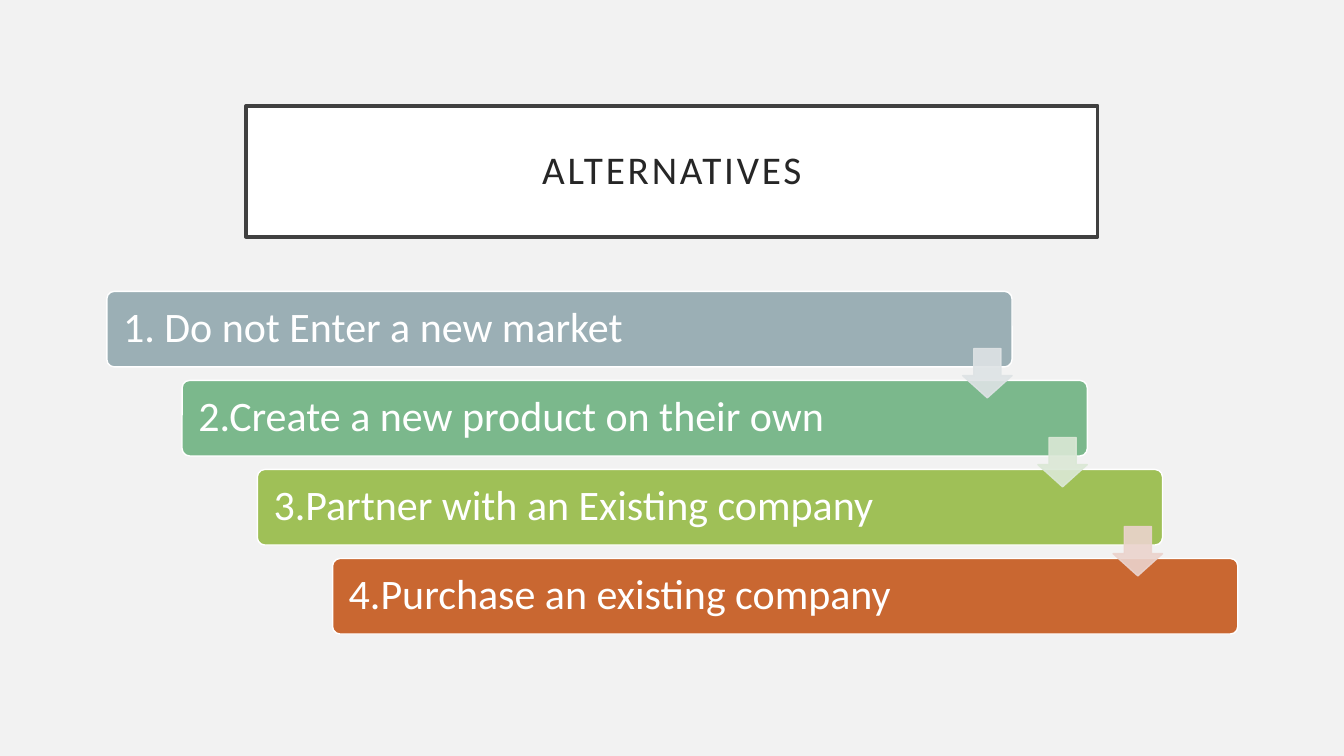
from lxml.etree import SubElement
from pptx import Presentation
from pptx.dml.color import RGBColor
from pptx.enum.shapes import MSO_SHAPE as Preset
from pptx.enum.text import MSO_ANCHOR as Anchor, MSO_AUTO_SIZE as AutoSize, PP_ALIGN as Align
from pptx.oxml.ns import qn
from pptx.util import Pt

ALTERNATIVES = [
    ("1. Do not Enter a new market", "9BAFB5"),
    ("2.Create a new product on their own", "7BB88C"),
    ("3.Partner with an Existing company", "9FC057"),
    ("4.Purchase an existing company", "C96731"),
]
ARROW_COLORS = ["DEE3E5", "DBE8D6", "EBD3CD"]
STEP_X, STEP_Y = 53.75, 63.6


def paint(color_format, color):
    color_format.rgb = RGBColor.from_string(color)


def write(shape, text, size=30, color="FFFFFF", align=Align.LEFT, inset=10, spacing=0):
    frame = shape.text_frame
    frame.word_wrap = True
    frame.auto_size = AutoSize.NONE
    frame.vertical_anchor = Anchor.MIDDLE
    frame.margin_left = frame.margin_right = Pt(inset)
    frame.margin_top = frame.margin_bottom = Pt(inset)
    paragraph = frame.paragraphs[0]
    paragraph.alignment = align
    paragraph.line_spacing = 0.9
    run = paragraph.add_run()
    run.text = text
    run.font.name = "Calibri"
    run.font.size = Pt(size)
    paint(run.font.color, color)
    if spacing:
        run.font._element.set("spc", str(spacing * 100))


class AlternativesSlide:
    def __init__(self, deck, background="F2F2F2"):
        self.slide = deck.slides.add_slide(deck.slide_layouts[5])
        fill = self.slide.background.fill
        fill.solid()
        paint(fill.fore_color, background)

    def style(self, shape, fill, line, width):
        shape.fill.solid()
        paint(shape.fill.fore_color, fill)
        paint(shape.line.color, line)
        shape.line.width = Pt(width)

    def shape(self, preset, left, top, width, height, fill, line):
        shape = self.slide.shapes.add_shape(preset, Pt(left), Pt(top), Pt(width), Pt(height))
        shape.shadow.inherit = False
        self.style(shape, fill, line, 1)
        return shape

    def title(self, text):
        heading = self.slide.shapes.title
        heading.left, heading.top = Pt(175.7), Pt(75.6)
        heading.width, heading.height = Pt(608.4), Pt(93.6)
        self.style(heading, "FFFFFF", "404040", 2.5)
        write(heading, text, size=28, color="262626", align=Align.CENTER, inset=14.4, spacing=2)

    def bar(self, step, text, color):
        bar = self.shape(Preset.ROUNDED_RECTANGLE, 76.3 + step * STEP_X, 208.1 + step * STEP_Y,
                         646.6, 54, color, "FFFFFF")
        bar.adjustments[0] = 0.1
        write(bar, text)

    def arrow(self, step, color):
        arrow = self.shape(Preset.DOWN_ARROW, 687.6 + step * STEP_X, 248.9 + step * STEP_Y,
                           35.3, 35.3, color, color)
        arrow.adjustments[0] = 0.55
        arrow.adjustments[1] = 0.45
        for tint in arrow._element.spPr.iter(qn("a:srgbClr")):
            SubElement(tint, qn("a:alpha"), val="90000")


def main():
    deck = Presentation()
    deck.slide_width, deck.slide_height = Pt(960), Pt(540)
    page = AlternativesSlide(deck)
    page.title("ALTERNATIVES")
    for step, (text, color) in enumerate(ALTERNATIVES):
        page.bar(step, text, color)
    for step, color in enumerate(ARROW_COLORS):
        page.arrow(step, color)
    deck.save("out.pptx")


if __name__ == "__main__":
    main()
